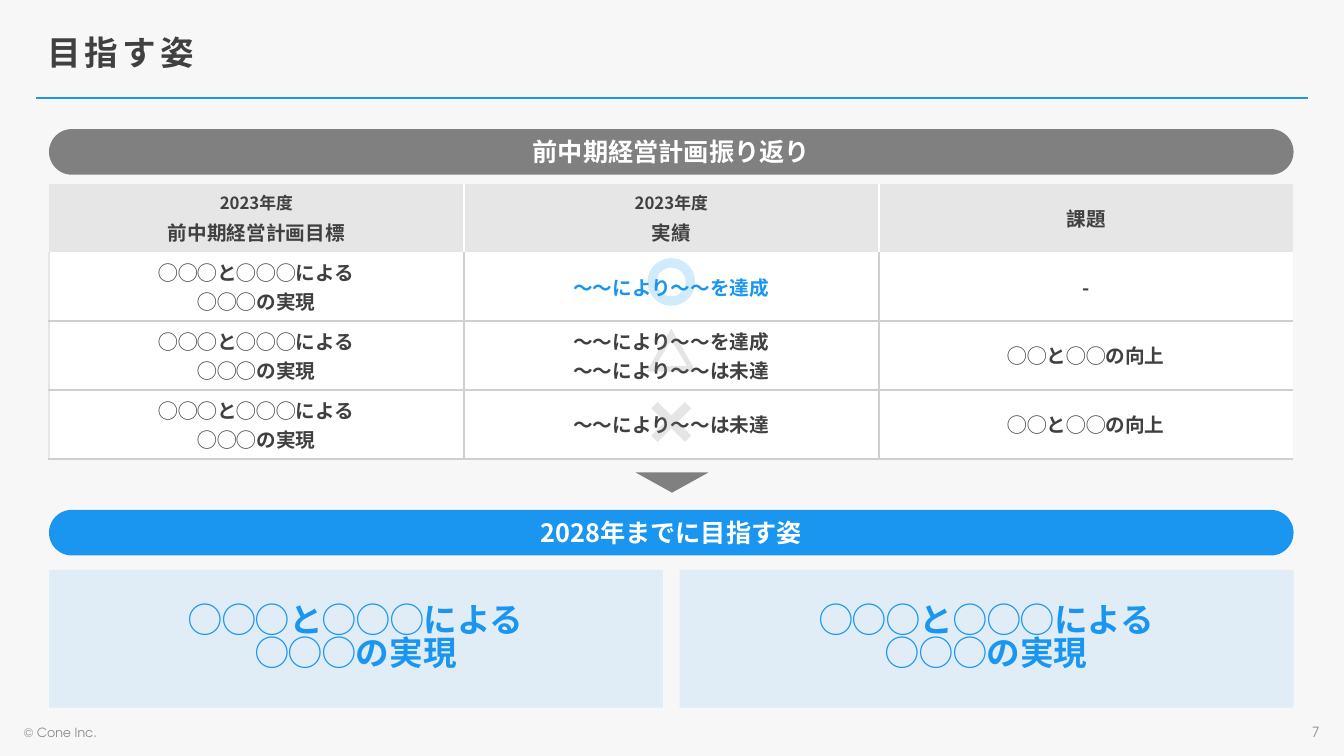
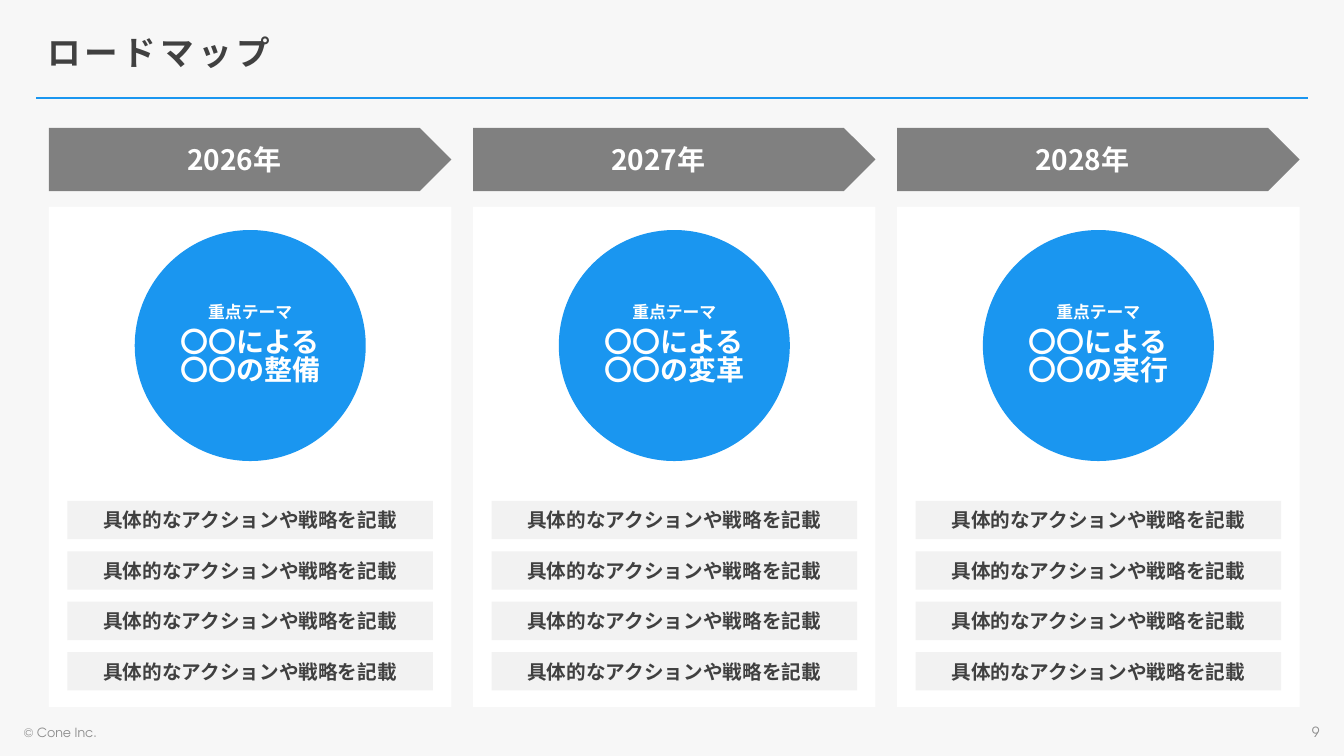
from pptx import Presentation
from pptx.dml.color import RGBColor
from pptx.enum import shapes, text
from pptx.oxml import ns
from pptx.util import Pt
from lxml import etree

BLUE = RGBColor(0x1A, 0x96, 0xF0)
GRAY = RGBColor(0x80, 0x80, 0x80)
DARK = RGBColor(0x40, 0x40, 0x40)
FOOTER_GRAY = RGBColor(0x8C, 0x8C, 0x8C)
HEADER_GRAY = RGBColor(0xE7, 0xE6, 0xE6)
GRID_GRAY = RGBColor(0xD0, 0xCE, 0xCE)
BAR_GRAY = RGBColor(0xF2, 0xF2, 0xF2)
BACKGROUND = RGBColor(0xF7, 0xF7, 0xF7)
WHITE = RGBColor(0xFF, 0xFF, 0xFF)

BODY_FONT = "Noto Sans CJK JP"
DISPLAY_FONT = "TeX Gyre Adventor"
LEFT, WIDTH = 35, 889
CENTER = LEFT + WIDTH / 2

SHAPE = shapes.MSO_SHAPE
ALIGN = text.PP_ALIGN
MIDDLE = text.MSO_ANCHOR.MIDDLE


def paint(shape, color, opacity=100):
    """Give a shape a flat fill without outline or shadow."""
    shape.shadow.inherit = False
    shape.line.fill.background()
    shape.fill.solid()
    shape.fill.fore_color.rgb = color
    if opacity < 100:
        color_element = shape.fill._xPr.find(".//" + ns.qn("a:srgbClr"))
        etree.SubElement(color_element, ns.qn("a:alpha"), val=str(opacity * 1000))
    return shape


def write(frame, lines, size, color, first_size=None, gap=0, spacing=None,
          align=ALIGN.CENTER, font=BODY_FONT, bold=True, tracking=None):
    """Write one paragraph per line; gap is the space after the first line."""
    frame.word_wrap = True
    frame.vertical_anchor = MIDDLE
    for index, line in enumerate(lines):
        paragraph = frame.add_paragraph() if index else frame.paragraphs[0]
        paragraph.add_run().text = line
        paragraph.alignment = align
        if spacing:
            paragraph.line_spacing = spacing
        if index == 1 and gap:
            paragraph.space_before = Pt(gap)
        paragraph.font.size = Pt(first_size if first_size and index == 0 else size)
        paragraph.font.bold = bold
        paragraph.font.color.rgb = color
        paragraph.font.name = font
        properties = paragraph._p.pPr.find(ns.qn("a:defRPr"))
        etree.SubElement(properties, ns.qn("a:ea"), typeface=BODY_FONT)
        if tracking:
            properties.set("spc", str(tracking * 100))


presentation = Presentation()
presentation.slide_width = Pt(960)
presentation.slide_height = Pt(540)

# Shared frame: background, title, rule and footers
slides = []
for title, number in (("目指す姿", "7"), ("ロードマップ", "9")):
    slide = presentation.slides.add_slide(presentation.slide_layouts[6])
    slides.append(slide)
    slide.background.fill.solid()
    slide.background.fill.fore_color.rgb = BACKGROUND

    rule = slide.shapes.add_connector(
        shapes.MSO_CONNECTOR.STRAIGHT, Pt(26), Pt(70), Pt(934.6), Pt(70))
    rule.line.color.rgb = BLUE
    rule.line.width = Pt(2)
    etree.SubElement(rule._element.spPr, ns.qn("a:effectLst"))

    title_box = slide.shapes.add_textbox(Pt(26.6), Pt(15), Pt(901.4), Pt(45.4))
    title_box.text_frame.margin_top = Pt(5.8)
    write(title_box.text_frame, [title], 24, DARK, spacing=0.9,
          align=ALIGN.LEFT, font=DISPLAY_FONT, tracking=3)

    for label, left, size, align in (("© Cone Inc.", 10, 9, ALIGN.LEFT),
                                     (number, 733.7, 10, ALIGN.RIGHT)):
        footer = slide.shapes.add_textbox(Pt(left), Pt(513.4), Pt(216), Pt(19.4))
        write(footer.text_frame, [label], size, FOOTER_GRAY,
              align=align, font=DISPLAY_FONT, bold=False)

vision, roadmap = slides

# Vision: review table
GOAL = ["◯◯◯と◯◯◯による", "◯◯◯の実現"]
ACHIEVED = "〜〜により〜〜を達成"
MISSED = "〜〜により〜〜は未達"
ISSUE = ["◯◯と◯◯の向上"]
rows = [
    [["2023年度", "前中期経営計画目標"], ["2023年度", "実績"], ["課題"]],
    [GOAL, [ACHIEVED], ["-"]],
    [GOAL, [ACHIEVED, MISSED], ISSUE],
    [GOAL, [MISSED], ISSUE],
]
table = vision.shapes.add_table(4, 3, Pt(LEFT), Pt(131.5), Pt(WIDTH), Pt(196.2)).table
table.first_row = table.horz_banding = False
style_id = table._tbl.tblPr.find(ns.qn("a:tableStyleId"))
style_id.text = "{2D5ABB26-0587-4C30-8999-92F81FD0307C}"  # no style, no grid
for column in table.columns:
    column.width = Pt(WIDTH / 3)
for row_index, row in enumerate(rows):
    header = row_index == 0
    table.rows[row_index].height = Pt(48.6 if header else 49.2)
    for column_index, lines in enumerate(row):
        cell = table.cell(row_index, column_index)
        cell.vertical_anchor = MIDDLE
        inner = WHITE if header else GRID_GRAY
        outer = None if header else HEADER_GRAY
        borders = {
            "a:lnL": inner if column_index else outer,
            "a:lnR": inner if column_index < 2 else None,
            "a:lnT": GRID_GRAY if row_index > 1 else None,
            "a:lnB": None if header else GRID_GRAY,
        }
        for edge, color in borders.items():
            if color is not None:
                line = etree.SubElement(cell._tc.get_or_add_tcPr(), ns.qn(edge),
                                        w=str(Pt(1.5)))
                fill = etree.SubElement(line, ns.qn("a:solidFill"))
                etree.SubElement(fill, ns.qn("a:srgbClr"), val=str(color))
        cell.fill.solid()
        cell.fill.fore_color.rgb = HEADER_GRAY if header else WHITE
        two_line_header = header and len(lines) > 1
        write(cell.text_frame, lines, 14,
              BLUE if (row_index, column_index) == (1, 1) else DARK,
              first_size=12 if two_line_header else None,
              gap=3 if two_line_header else 0)

# Vision: result marks over the middle column
MARK = 34
for kind, top, adjustment, rotation, color in (
        (SHAPE.DONUT, 184.4, 0.197, 0, BLUE), (SHAPE.CROSS, 284.4, 0.407, 45, GRAY)):
    mark = vision.shapes.add_shape(
        kind, Pt(CENTER - MARK / 2), Pt(top), Pt(MARK), Pt(MARK))
    mark.adjustments[0] = adjustment
    mark.rotation = rotation
    paint(mark, color, 20)

builder = vision.shapes.build_freeform(Pt(CENTER), Pt(234.7))
builder.add_line_segments([(Pt(CENTER + 17.6), Pt(265.5)), (Pt(CENTER - 17.6), Pt(265.5))])
builder.move_to(Pt(CENTER), Pt(242.6))
builder.add_line_segments([(Pt(CENTER - 11.2), Pt(261.4)), (Pt(CENTER + 11.2), Pt(261.4))])
paint(builder.convert_to_shape(), GRAY, 20)

# Vision: section banners, arrow and goal panels
for label, top, color in (("前中期経営計画振り返り", 92.2, GRAY),
                          ("2028年までに目指す姿", 364.2, BLUE)):
    banner = vision.shapes.add_shape(
        SHAPE.ROUNDED_RECTANGLE, Pt(LEFT), Pt(top), Pt(WIDTH), Pt(32.6))
    banner.adjustments[0] = 0.5
    write(paint(banner, color).text_frame, [label], 18, WHITE)

arrow = vision.shapes.add_shape(
    SHAPE.ISOSCELES_TRIANGLE, Pt(CENTER - 25.5), Pt(337.5), Pt(52), Pt(14.4))
arrow.rotation = 180
paint(arrow, GRAY)

PANEL_GAP = 12
panel_width = (WIDTH - PANEL_GAP) / 2
for index in range(2):
    panel = vision.shapes.add_shape(
        SHAPE.RECTANGLE, Pt(LEFT + index * (panel_width + PANEL_GAP)), Pt(407),
        Pt(panel_width), Pt(98.6))
    write(paint(panel, BLUE, 10).text_frame, GOAL, 24, BLUE, spacing=0.82)

# Roadmap: one column per year
COLUMN_WIDTH, COLUMN_PITCH = 287.5, 302.9
CIRCLE = 165
BAR_INSET, BAR_PITCH = 13.2, 36
for index, (year, theme) in enumerate((("2026年", "〇〇の整備"),
                                       ("2027年", "〇〇の変革"),
                                       ("2028年", "〇〇の実行"))):
    left = LEFT + index * COLUMN_PITCH
    year_arrow = roadmap.shapes.add_shape(
        SHAPE.RIGHT_ARROW, Pt(left), Pt(91.3), Pt(COLUMN_WIDTH), Pt(45.2))
    year_arrow.adjustments[0] = 1
    year_arrow.adjustments[1] = 0.5
    write(paint(year_arrow, GRAY).text_frame, [year], 20, WHITE)

    card = roadmap.shapes.add_shape(
        SHAPE.RECTANGLE, Pt(left), Pt(147.8), Pt(COLUMN_WIDTH), Pt(357.2))
    paint(card, WHITE)

    circle = roadmap.shapes.add_shape(
        SHAPE.OVAL, Pt(left + (COLUMN_WIDTH - CIRCLE) / 2), Pt(164.3),
        Pt(CIRCLE), Pt(CIRCLE))
    write(paint(circle, BLUE).text_frame, ["重点テーマ", "〇〇による", theme],
          20, WHITE, first_size=12, gap=6, spacing=0.82)

    for bar_index in range(4):
        bar = roadmap.shapes.add_shape(
            SHAPE.RECTANGLE, Pt(left + BAR_INSET), Pt(357.8 + bar_index * BAR_PITCH),
            Pt(COLUMN_WIDTH - 2 * BAR_INSET), Pt(27.4))
        write(paint(bar, BAR_GRAY).text_frame,
              ["具体的なアクションや戦略を記載"], 14, DARK)

presentation.save("out.pptx")
